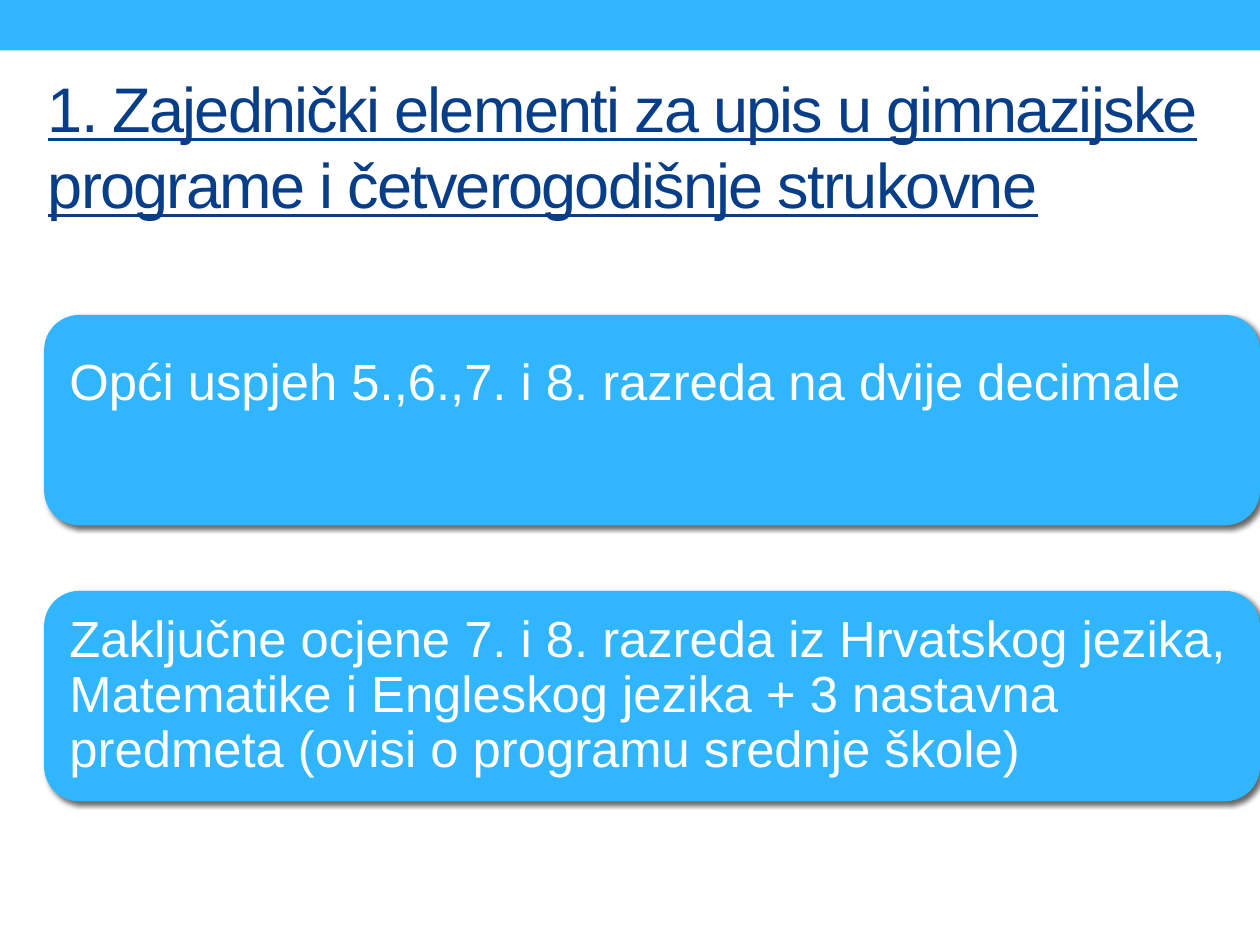
"""Build a slide listing the common elements for secondary school enrolment."""
import dataclasses

import lxml.etree
import pptx
import pptx.dml.color
import pptx.enum.shapes
import pptx.enum.text
import pptx.oxml
import pptx.oxml.ns
import pptx.slide
import pptx.text.text
import pptx.util

SKY = pptx.dml.color.RGBColor(0x31, 0xB6, 0xFD)
NAVY = pptx.dml.color.RGBColor(0x07, 0x3E, 0x87)
WHITE = pptx.dml.color.RGBColor(0xFF, 0xFF, 0xFF)
FONT = "Arial"
WIDTH, HEIGHT = pptx.util.Inches(10), pptx.util.Inches(7.5)
CARD_LEFT, CARD_TOP = pptx.util.Inches(0.35), pptx.util.Inches(2.5)
CARD_HEIGHT, CARD_PITCH = pptx.util.Inches(1.67), pptx.util.Inches(2.19)
INSET = pptx.util.Inches(0.12)
SHADOW = (
    f'<a:effectLst {pptx.oxml.ns.nsdecls("a")}>'
    '<a:outerShdw blurRad="38100" dist="25400" dir="2700000" rotWithShape="0">'
    '<a:srgbClr val="000000"><a:alpha val="60000"/></a:srgbClr>'
    "</a:outerShdw></a:effectLst>"
)


@dataclasses.dataclass(frozen=True)
class Card:
    text: str
    bottom_inset: int = INSET


CARDS = (
    Card("Opći uspjeh 5.,6.,7. i 8. razreda na dvije decimale", pptx.util.Inches(0.69)),
    Card(
        "Zaključne ocjene 7. i 8. razreda iz Hrvatskog jezika, Matematike i Engleskog "
        "jezika + 3 nastavna predmeta (ovisi o programu srednje škole)"
    ),
)


def add_text(
    tf: pptx.text.text.TextFrame, text: str, size: float, color: pptx.dml.color.RGBColor
) -> pptx.text.text._Run:
    """Write one left-aligned run, centred vertically in its frame."""
    tf.word_wrap = True
    tf.auto_size = pptx.enum.text.MSO_AUTO_SIZE.NONE
    tf.vertical_anchor = pptx.enum.text.MSO_ANCHOR.MIDDLE
    p = tf.paragraphs[0]
    p.alignment = pptx.enum.text.PP_ALIGN.LEFT
    r = p.add_run()
    r.text = text
    r.font.name = FONT
    r.font.size = pptx.util.Pt(size)
    r.font.color.rgb = color
    return r


def add_title(slide: pptx.slide.Slide, text: str) -> None:
    """Place and format the underlined title."""
    sp = slide.shapes.title
    sp.left, sp.top = pptx.util.Inches(0.28), pptx.util.Inches(0.37)
    sp.width, sp.height = pptx.util.Inches(9.37), pptx.util.Inches(1.57)
    r = add_text(sp.text_frame, text, 36, NAVY)
    r.font.underline = True
    r._r.get_or_add_rPr().set("spc", "-100")


def add_band(slide: pptx.slide.Slide) -> None:
    """Draw the coloured band along the top edge."""
    sp = slide.shapes.add_shape(
        pptx.enum.shapes.MSO_SHAPE.RECTANGLE, 0, 0, WIDTH, pptx.util.Inches(0.4)
    )
    sp.shadow.inherit = False
    sp.fill.solid()
    sp.fill.fore_color.rgb = SKY
    sp.line.fill.background()


def add_card(slide: pptx.slide.Slide, row: int, card: Card) -> None:
    """Draw one rounded card with its shadow and text."""
    sp = slide.shapes.add_shape(
        pptx.enum.shapes.MSO_SHAPE.ROUNDED_RECTANGLE,
        CARD_LEFT,
        CARD_TOP + row * CARD_PITCH,
        WIDTH - CARD_LEFT,
        CARD_HEIGHT,
    )
    sp.fill.solid()
    sp.fill.fore_color.rgb = SKY
    sp.line.fill.background()
    sp._element.spPr.append(pptx.oxml.parse_xml(SHADOW))
    tf = sp.text_frame
    tf.margin_left = tf.margin_right = tf.margin_top = INSET
    tf.margin_bottom = card.bottom_inset
    add_text(tf, card.text, 29, WHITE)
    tf.paragraphs[0].line_spacing = 0.9


def main() -> None:
    """Assemble and save the presentation."""
    prs = pptx.Presentation()
    prs.slide_width, prs.slide_height = WIDTH, HEIGHT
    slide = prs.slides.add_slide(prs.slide_layouts[5])
    add_band(slide)
    add_title(
        slide,
        "1. Zajednički elementi za upis u gimnazijske programe i četverogodišnje strukovne",
    )
    for row, card in enumerate(CARDS):
        add_card(slide, row, card)
    prs.save("out.pptx")


if __name__ == "__main__":
    main()
